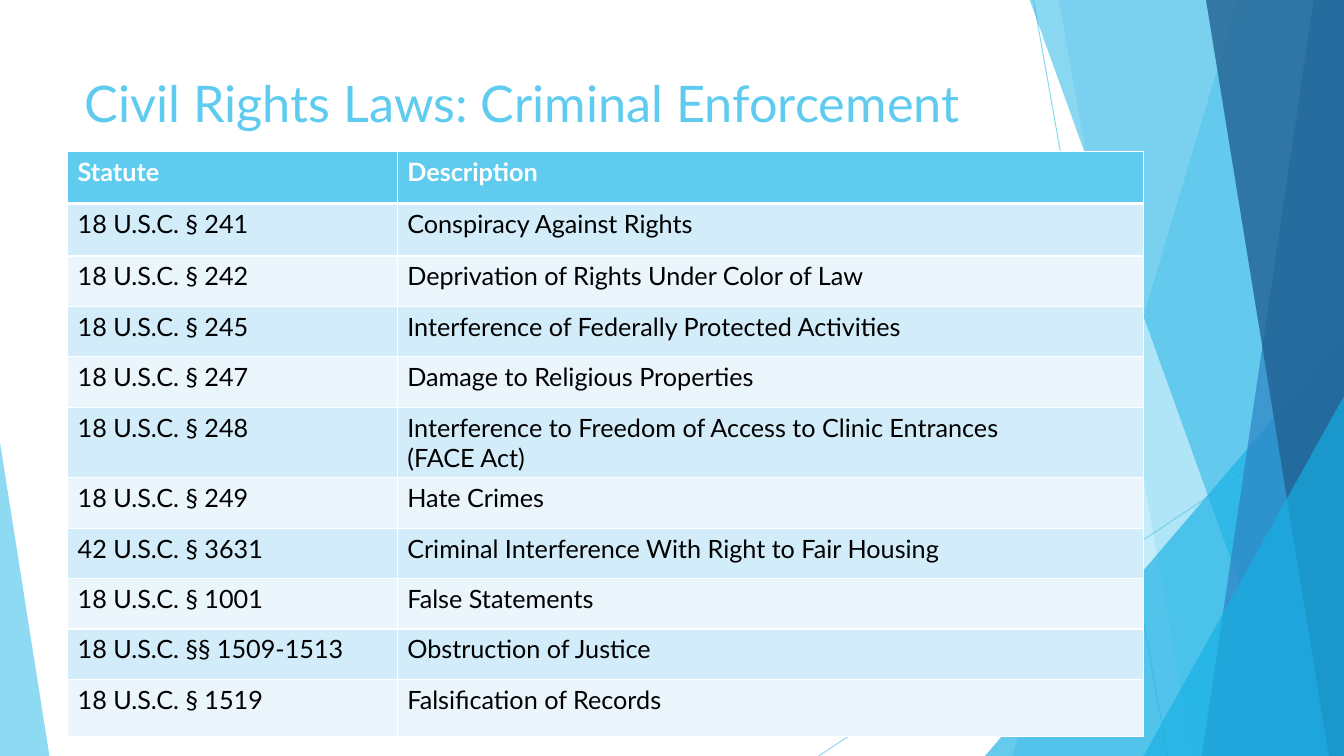
"""Build the slide on criminal enforcement of civil rights laws."""
from lxml import etree
from pptx import Presentation
from pptx.dml.color import RGBColor
from pptx.enum.shapes import MSO_CONNECTOR, MSO_SHAPE
from pptx.enum.text import MSO_ANCHOR, PP_ALIGN
from pptx.oxml.ns import qn
from pptx.util import Inches, Pt

TITLE = "Civil Rights Laws: Criminal Enforcement"
STATUTES = [
    ("Statute", "Description"),
    ("18 U.S.C. § 241", "Conspiracy Against Rights"),
    ("18 U.S.C. § 242", "Deprivation of Rights Under Color of Law"),
    ("18 U.S.C. § 245", "Interference of Federally Protected Activities"),
    ("18 U.S.C. § 247", "Damage to Religious Properties"),
    ("18 U.S.C. § 248", "Interference to Freedom of Access to Clinic Entrances \n(FACE Act)"),
    ("18 U.S.C. § 249", "Hate Crimes"),
    ("42 U.S.C. § 3631", "Criminal Interference With Right to Fair Housing"),
    ("18 U.S.C. § 1001", "False Statements"),
    ("18 U.S.C. §§ 1509-1513", "Obstruction of Justice"),
    ("18 U.S.C. § 1519", "Falsification of Records"),
]
COLUMN_WIDTHS = [3.27, 7.4]
ROW_HEIGHTS = [0.52, 0.52, 0.5, 0.5, 0.5, 0.7, 0.5, 0.5, 0.5, 0.5, 0.57]

FONT = "Lato"
SKY = RGBColor(0x5F, 0xCB, 0xEF)
CYAN = RGBColor(0x17, 0xB0, 0xE4)
BLUE = RGBColor(0x2E, 0x83, 0xC3)
NAVY = RGBColor(0x22, 0x62, 0x92)
WHITE = RGBColor(0xFF, 0xFF, 0xFF)
BLACK = RGBColor(0, 0, 0)
BANDS = [RGBColor(0xEA, 0xF6, 0xFC), RGBColor(0xD2, 0xEC, 0xF9)]

WIDTH, HEIGHT, PANEL_TOP = 13.33, 7.5, -0.01
TRIANGLE = MSO_SHAPE.ISOSCELES_TRIANGLE
STRAIGHT = MSO_CONNECTOR.STRAIGHT
TOP = MSO_ANCHOR.TOP
LEFT = PP_ALIGN.LEFT

RAYS = [(10.25, 0, 11.58, HEIGHT), (WIDTH, 4.03, 8.12, HEIGHT)]
# Panels give the left edge at top and bottom; triangles give left, top, width and apex.
DECORATIONS = [
    ("panel", (12.28, 10.04), SKY, 36),
    ("panel", (10.5, 11.83), SKY, 20),
    ("triangle", (9.77, 3.33, 3.56, 1), CYAN, 66),
    ("panel", (10.21, 12.91), CYAN, 50),
    ("panel", (13.03, 11.92), BLUE, 70),
    ("panel", (11.96, 13.18), NAVY, 80),
    ("triangle", (11.34, 3.93, 1.99, 1), CYAN, 66),
    ("triangle", (0, 4.39, 0.49, 0), SKY, 70),
]


def set_opacity(shape, percent):
    """Set the opacity of the shape's only colour."""
    color = shape._element.spPr.find(".//" + qn("a:srgbClr"))
    etree.SubElement(color, qn("a:alpha"), val=str(percent * 1000))


def add_ray(page, start_x, start_y, end_x, end_y):
    """Draw one thin translucent line."""
    ray = page.shapes.add_connector(
        STRAIGHT, Inches(start_x), Inches(start_y), Inches(end_x), Inches(end_y))
    ray.line.color.rgb = SKY
    ray.line.width = Pt(0.75)
    set_opacity(ray, 70)
    etree.SubElement(ray._element.spPr, qn("a:effectLst"))


def add_panel(page, top_x, bottom_x):
    """Outline a panel that runs to the right edge of the slide."""
    builder = page.shapes.build_freeform(Inches(top_x), Inches(PANEL_TOP))
    corners = [(WIDTH, PANEL_TOP), (WIDTH, HEIGHT), (bottom_x, HEIGHT)]
    builder.add_line_segments([(Inches(x), Inches(y)) for x, y in corners], close=True)
    return builder.convert_to_shape()


def add_triangle(page, left, top, width, apex):
    """Add a right triangle that stands on the bottom edge of the slide."""
    triangle = page.shapes.add_shape(
        TRIANGLE, Inches(left), Inches(top), Inches(width), Inches(HEIGHT - top))
    triangle.adjustments[0] = apex
    return triangle


def write(frame, text, size=18, color=BLACK, bold=False):
    """Put one formatted paragraph in a text frame."""
    para = frame.paragraphs[0]
    para.text = text
    para.alignment = LEFT
    for span in para.runs:
        span.font.name = FONT
        span.font.size = Pt(size)
        span.font.bold = bold
        span.font.color.rgb = color


def add_borders(cell, row):
    """Give a cell white borders, with a heavy one below the header."""
    heavy_edge = {0: "lnB", 1: "lnT"}.get(row)
    properties = cell._tc.get_or_add_tcPr()
    for edge in ("lnL", "lnR", "lnT", "lnB"):
        points = 3 if edge == heavy_edge else 1
        border = etree.SubElement(properties, qn("a:" + edge), w=str(Pt(points)))
        fill = etree.SubElement(border, qn("a:solidFill"))
        etree.SubElement(fill, qn("a:srgbClr"), val=str(WHITE))


def add_statutes(page):
    """Add the table of statutes."""
    table = page.shapes.add_table(
        len(STATUTES), len(COLUMN_WIDTHS), Inches(0.67), Inches(1.5),
        Inches(sum(COLUMN_WIDTHS)), Inches(sum(ROW_HEIGHTS))).table
    for column, width in zip(table.columns, COLUMN_WIDTHS):
        column.width = Inches(width)
    for row, (texts, height) in enumerate(zip(STATUTES, ROW_HEIGHTS)):
        table.rows[row].height = Inches(height)
        header = row == 0
        for column, text in enumerate(texts):
            cell = table.cell(row, column)
            add_borders(cell, row)
            cell.fill.solid()
            cell.fill.fore_color.rgb = SKY if header else BANDS[row % 2]
            write(cell.text_frame, text, color=WHITE if header else BLACK, bold=header)


def main():
    """Build and save the deck."""
    deck = Presentation()
    deck.slide_width, deck.slide_height = Inches(WIDTH), Inches(HEIGHT)
    page = deck.slides.add_slide(deck.slide_layouts[5])
    for ray in RAYS:
        add_ray(page, *ray)
    makers = {"panel": add_panel, "triangle": add_triangle}
    for kind, geometry, color, opacity in DECORATIONS:
        shape = makers[kind](page, *geometry)
        shape.shadow.inherit = False
        shape.fill.solid()
        shape.fill.fore_color.rgb = color
        set_opacity(shape, opacity)
        shape.line.fill.background()
    title = page.shapes.title
    title.left, title.top = Inches(0.74), Inches(0.67)
    title.width, title.height = Inches(9.4), Inches(1.44)
    title.text_frame.vertical_anchor = TOP
    write(title.text_frame, TITLE, size=36, color=SKY)
    add_statutes(page)
    deck.save("out.pptx")


if __name__ == "__main__":
    main()
